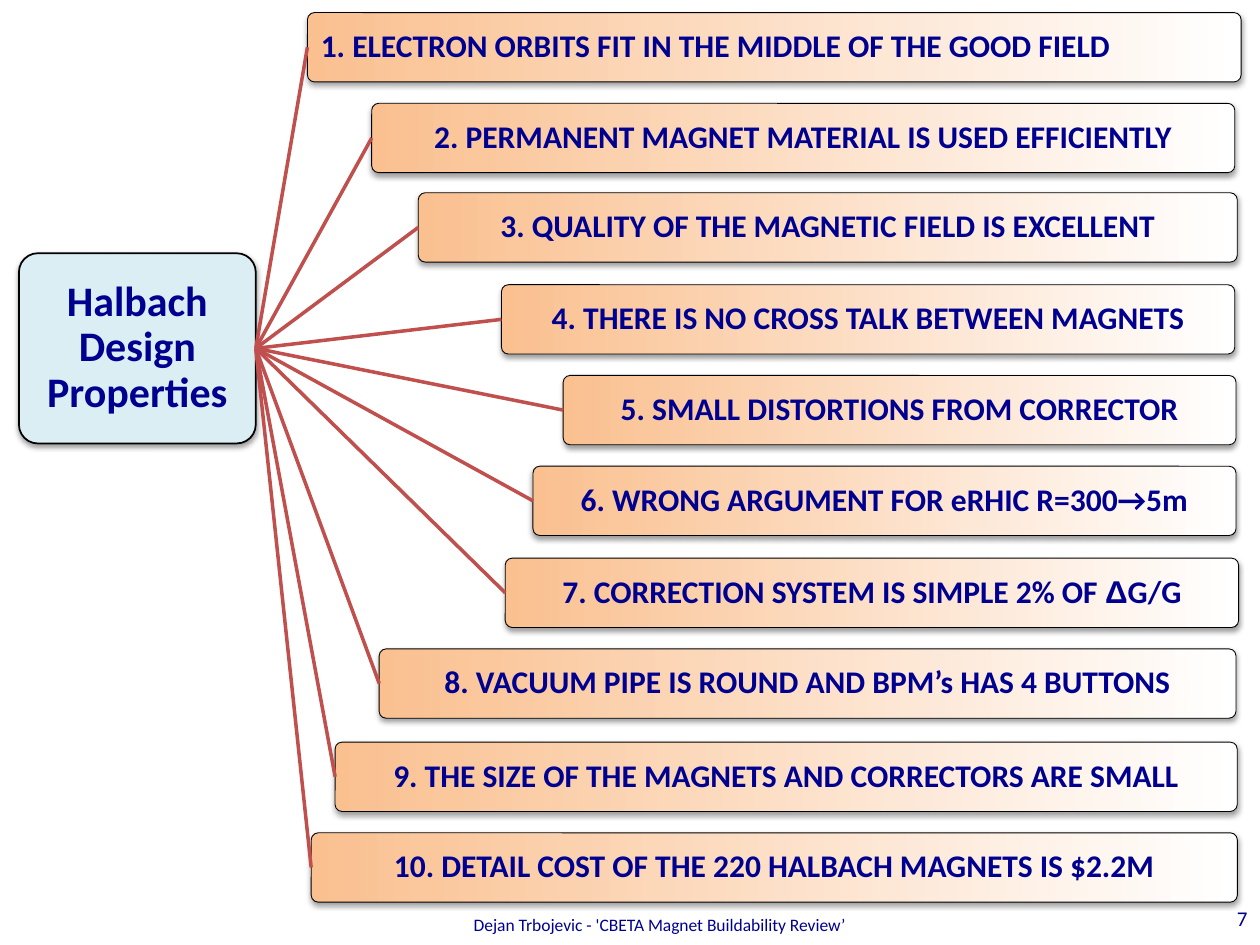
from lxml import etree
from pptx import Presentation
from pptx.dml.color import RGBColor
from pptx.enum.shapes import MSO_CONNECTOR, MSO_SHAPE
from pptx.enum.text import MSO_ANCHOR, PP_ALIGN
from pptx.oxml.ns import qn
from pptx.util import Inches, Pt

ROUNDED = MSO_SHAPE.ROUNDED_RECTANGLE
STRAIGHT = MSO_CONNECTOR.STRAIGHT
MIDDLE = MSO_ANCHOR.MIDDLE
LEFT, CENTER, RIGHT = PP_ALIGN.LEFT, PP_ALIGN.CENTER, PP_ALIGN.RIGHT

NAVY = RGBColor(0x00, 0x00, 0x90)
BLACK = RGBColor(0x00, 0x00, 0x00)
WHITE = RGBColor(0xFF, 0xFF, 0xFF)
PALE_BLUE = RGBColor(0xDB, 0xEE, 0xF4)
ORANGE = RGBColor(0xFA, 0xC0, 0x90)
RED = RGBColor(0xC0, 0x50, 0x4D)

PROPERTY_HEIGHT = 0.55

# Left, top, width and text runs (text, font) of each property
PROPERTIES = [
    (2.44, 0.10, 7.41, [("1. ELECTRON ORBITS FIT IN THE MIDDLE OF THE GOOD FIELD", "Calibri")]),
    (2.95, 0.82, 6.85, [("2. PERMANENT MAGNET MATERIAL IS USED EFFICIENTLY", "Calibri")]),
    (3.32, 1.53, 6.50, [("3. QUALITY OF THE MAGNETIC FIELD IS EXCELLENT", "Calibri")]),
    (3.98, 2.26, 5.82, [("4. THERE IS NO CROSS TALK BETWEEN MAGNETS", "Calibri")]),
    (4.47, 2.98, 5.34, [("5. SMALL DISTORTIONS FROM CORRECTOR", "Calibri")]),
    (4.23, 3.70, 5.58, [("6. WRONG ARGUMENT FOR eRHIC R=300→5m", "Calibri")]),
    (4.01, 4.43, 5.82, [("7. CORRECTION SYSTEM IS SIMPLE 2% OF ", "Calibri"),
                        ("Δ", "Arial"), ("G/G", "Calibri")]),
    (3.01, 5.15, 6.80, [("8. VACUUM PIPE IS ROUND AND BPM’s HAS 4 BUTTONS", "Calibri")]),
    (2.66, 5.89, 7.16, [("9. THE SIZE OF THE MAGNETS AND CORRECTORS ARE SMALL", "Calibri")]),
    (2.47, 6.61, 7.35, [("10. DETAIL COST OF THE 220 HALBACH MAGNETS IS $2.2M", "Calibri")]),
]


def write_text(shape, runs, size, alignment, bold=False):
    """Fill a shape with one vertically centred paragraph."""
    text_frame = shape.text_frame
    text_frame.word_wrap = True
    text_frame.vertical_anchor = MIDDLE
    paragraph = text_frame.paragraphs[0]
    paragraph.alignment = alignment
    paragraph.line_spacing = 0.9
    for text, font_name in runs:
        run = paragraph.add_run()
        run.text = text
        run.font.name = font_name
        run.font.size = Pt(size)
        run.font.bold = bold
        run.font.color.rgb = NAVY


def add_box(left, top, width, height, line_width):
    """Add a rounded, outlined box with a soft shadow and narrow margins."""
    box = slide.shapes.add_shape(
        ROUNDED, Inches(left), Inches(top), Inches(width), Inches(height))
    box.adjustments[0] = 0.1
    box.line.color.rgb = BLACK
    box.line.width = Pt(line_width)
    box.shadow.inherit = False
    effects = box._element.spPr.find(qn("a:effectLst"))
    shadow = etree.SubElement(effects, qn("a:outerShdw"), blurRad="40000",
                              dist="20000", dir="5400000", rotWithShape="0")
    color = etree.SubElement(shadow, qn("a:srgbClr"), val="000000")
    etree.SubElement(color, qn("a:alpha"), val="38000")
    text_frame = box.text_frame
    text_frame.margin_left = text_frame.margin_right = Inches(0.03)
    text_frame.margin_top = text_frame.margin_bottom = Inches(0.03)
    return box


presentation = Presentation()
presentation.slide_width = Inches(10)
presentation.slide_height = Inches(7.5)
slide = presentation.slides.add_slide(presentation.slide_layouts[6])

# Footer and page number
footer = slide.shapes.add_textbox(Inches(2.48), Inches(7.19), Inches(5.51), Inches(0.31))
write_text(footer, [("Dejan Trbojevic - 'CBETA Magnet Buildability Review’", "Calibri")],
           10, CENTER)
page_number = slide.shapes.add_textbox(Inches(9.24), Inches(7.1), Inches(0.76), Inches(0.4))
write_text(page_number, [("7", "Calibri")], 12, RIGHT)

# Root of the tree
root = add_box(0.15, 2.01, 1.88, 1.51, 1)
root.fill.solid()
root.fill.fore_color.rgb = PALE_BLUE
write_text(root, [("Halbach Design Properties", "Calibri")], 24, CENTER, bold=True)

# Properties, each joined to the root
for index, (left, top, width, runs) in enumerate(PROPERTIES):
    box = add_box(left, top, width, PROPERTY_HEIGHT, 0.5)
    box.fill.gradient()
    box.fill.gradient_angle = 0
    for stop, stop_color in zip(box.fill.gradient_stops, (ORANGE, WHITE)):
        stop.color.rgb = stop_color
    write_text(box, runs, 18, CENTER if index else LEFT, bold=True)
    if index == 0:
        box.text_frame.margin_left = Inches(0.09)

    branch = slide.shapes.add_connector(STRAIGHT, 0, 0, 0, 0)
    branch.begin_connect(root, 3)
    branch.end_connect(box, 1)
    branch.line.color.rgb = RED
    branch.line.width = Pt(2)
    etree.SubElement(branch._element.spPr, qn("a:effectLst"))

presentation.save("out.pptx")
